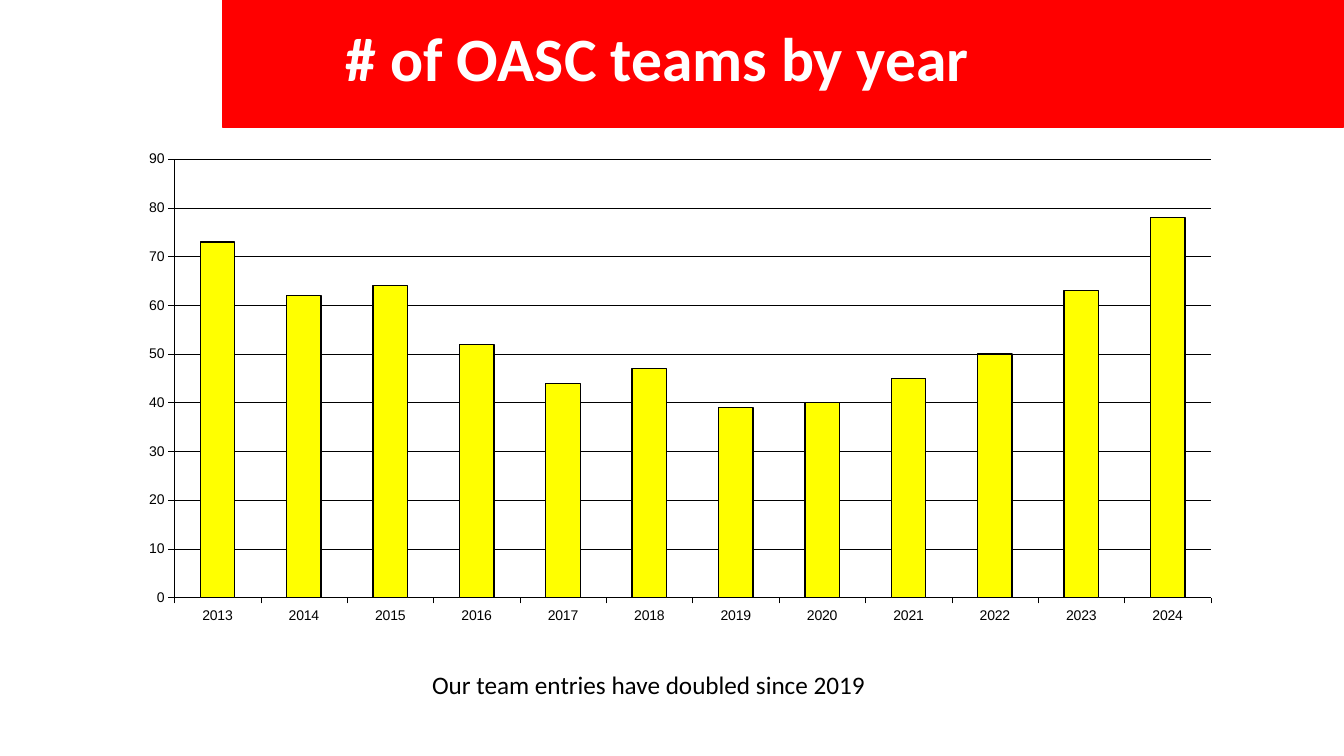
from lxml import etree
from pptx import Presentation
from pptx.chart.data import CategoryChartData
from pptx.dml.color import RGBColor
from pptx.enum.chart import XL_CHART_TYPE as ChartType, XL_TICK_LABEL_POSITION as LabelPosition, XL_TICK_MARK as TickMark
from pptx.enum.shapes import MSO_SHAPE as Shape
from pptx.enum.text import MSO_ANCHOR as Anchor, MSO_AUTO_SIZE as AutoSize, PP_ALIGN as Align
from pptx.oxml import parse_xml
from pptx.oxml.ns import nsdecls, qn
from pptx.util import Cm, Pt

COLOURS = {"band": "FF0000", "title": "FFFFFF", "bar": "FFFF00", "ink": "000000", "paper": "FFFFFF"}
TEAMS = [73, 62, 64, 52, 44, 47, 39, 40, 45, 50, 63, 78]
FIRST_YEAR = 2013


class SlideBuilder:
    text_font = "Calibri"
    chart_font = "Arial"

    def __init__(self, slide):
        self.slide = slide

    def colour(self, name):
        return RGBColor.from_string(COLOURS[name])

    def box(self, left, top, width, height):
        return Cm(left), Cm(top), Cm(width), Cm(height)

    def fill(self, part, name):
        part.fill.solid()
        part.fill.fore_color.rgb = self.colour(name)

    def line(self, part, name, width):
        part.line.color.rgb = self.colour(name)
        part.line.width = Pt(width)

    def font(self, font, face, size, name, bold=False):
        font.name = face
        font.size = Pt(size)
        font.bold = bold
        font.color.rgb = self.colour(name)

    def title(self, text, *place):
        heading = self.slide.shapes.title
        heading.left, heading.top, heading.width, heading.height = self.box(*place)
        frame = heading.text_frame
        frame.text = text
        frame.word_wrap = True
        frame.auto_size = AutoSize.NONE
        frame.vertical_anchor = Anchor.MIDDLE
        paragraph = frame.paragraphs[0]
        paragraph.alignment = Align.LEFT
        paragraph.line_spacing = 0.9
        self.font(paragraph.runs[0].font, self.text_font, 44, "title", True)

    def band(self, *place):
        band = self.slide.shapes.add_shape(Shape.RECTANGLE, *self.box(*place))
        band.shadow.inherit = False
        self.fill(band, "band")
        self.line(band, "band", 1)
        self.slide.shapes.title._element.addprevious(band._element)

    def caption(self, text, *place):
        frame = self.slide.shapes.add_textbox(*self.box(*place)).text_frame
        frame.text = text
        frame.word_wrap = False
        frame.auto_size = AutoSize.SHAPE_TO_FIT_TEXT
        self.font(frame.paragraphs[0].runs[0].font, self.text_font, 18, "ink")

    def axis(self, axis):
        axis.major_tick_mark = TickMark.OUTSIDE
        axis.minor_tick_mark = TickMark.NONE
        self.font(axis.tick_labels.font, self.chart_font, 10, "ink")
        self.line(axis.format, "ink", 0.25)

    def plot_layout(self, chart, **edges):
        plot_area = chart._chartSpace.find(f".//{qn('c:plotArea')}")
        for layout in plot_area.findall(qn("c:layout")):
            plot_area.remove(layout)
        layout = parse_xml(f'<c:layout {nsdecls("c")}><c:manualLayout/></c:layout>')
        settings = {"layoutTarget": "inner", "xMode": "edge", "yMode": "edge", **edges}
        for tag, value in settings.items():
            etree.SubElement(layout[0], qn(f"c:{tag}")).set("val", str(value))
        plot_area.insert(0, layout)

    def chart_background(self, chart):
        background = parse_xml(
            f'<c:spPr {nsdecls("c", "a")}><a:solidFill><a:srgbClr val="{COLOURS["paper"]}"/></a:solidFill>'
            "<a:ln><a:noFill/></a:ln></c:spPr>"
        )
        chart._chartSpace.find(qn("c:chart")).addnext(background)

    def column_chart(self, categories, values, *place):
        data = CategoryChartData()
        data.categories = categories
        data.add_series("Series 1", values)
        chart = self.slide.shapes.add_chart(ChartType.COLUMN_CLUSTERED, *self.box(*place), data).chart
        chart.has_title = False
        chart.has_legend = False
        self.font(chart.font, self.chart_font, 10, "ink")
        self.chart_background(chart)
        self.plot_layout(chart, x=0.03, y=0.03, w=0.94, h=0.87)
        plot = chart.plots[0]
        plot.gap_width = 150
        plot.vary_by_categories = False
        columns = plot.series[0].format
        self.fill(columns, "bar")
        self.line(columns, "ink", 1)
        years, counts = chart.category_axis, chart.value_axis
        self.axis(years)
        self.axis(counts)
        years.tick_label_position = LabelPosition.LOW
        counts.minimum_scale, counts.maximum_scale, counts.major_unit = 0, 90, 10
        counts.has_major_gridlines = True
        self.line(counts.major_gridlines.format, "ink", 0.25)


def main():
    deck = Presentation()
    deck.slide_width, deck.slide_height = Cm(33.87), Cm(19.05)
    builder = SlideBuilder(deck.slides.add_slide(deck.slide_layouts[5]))
    builder.title("# of OASC teams by year", 8.46, 0.18, 18.9, 2.72)
    builder.band(5.61, 0, 28.25, 3.2)
    years = [str(FIRST_YEAR + offset) for offset in range(len(TEAMS))]
    builder.column_chart(years, TEAMS, 3.56, 3.63, 27.79, 12.7)
    builder.caption("Our team entries have doubled since 2019", 10.64, 16.74, 11.56, 1.02)
    deck.save("out.pptx")


if __name__ == "__main__":
    main()
